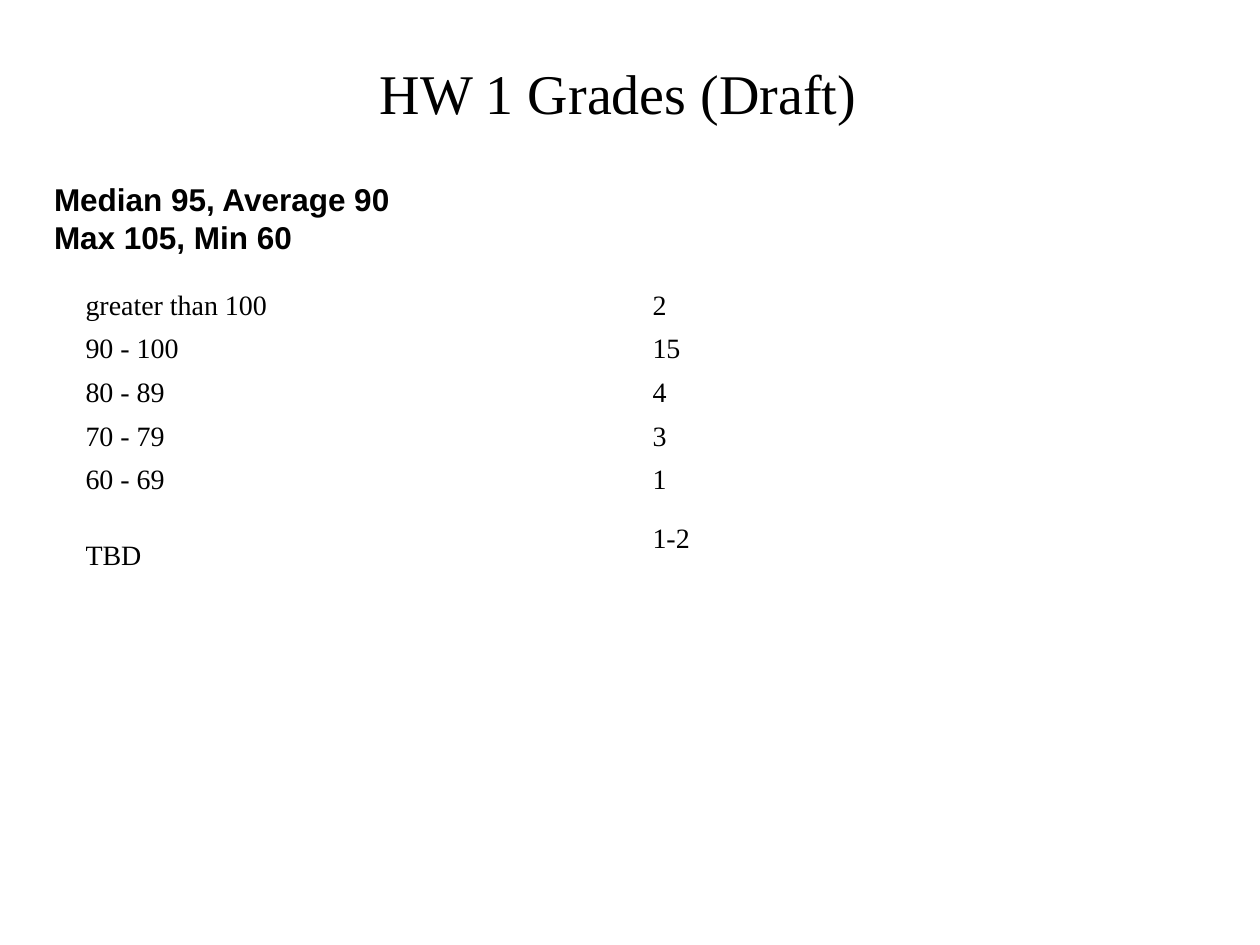
import pptx
import pptx.util
import pptx.dml.color
import pptx.enum.text
from dataclasses import dataclass

Cm = pptx.util.Cm
Anchor = pptx.enum.text.MSO_ANCHOR
Align = pptx.enum.text.PP_ALIGN

# Content
TITLE = "HW 1 Grades (Draft)"
SUMMARY = ["Median 95, Average 90", "Max 105, Min 60"]
GRADES = [
    ("greater than 100", "2"),
    ("90 - 100", "15"),
    ("80 - 89", "4"),
    ("70 - 79", "3"),
    ("60 - 69", "1"),
    ("TBD", "1-2"),
]


@dataclass(frozen=True)
class Theme:
    ink: pptx.dml.color.RGBColor = pptx.dml.color.RGBColor(0, 0, 0)
    serif: str = "Times New Roman"
    sans: str = "Arial"
    title_size: int = 32
    summary_size: int = 18
    table_size: int = 16


THEME = Theme()


def write_text(text_frame, text, font_name, size, bold=False, align=Align.LEFT):
    text_frame.text = text
    for paragraph in text_frame.paragraphs:
        paragraph.alignment = align
        for run in paragraph.runs:
            run.font.name = font_name
            run.font.size = pptx.util.Pt(size)
            run.font.bold = bold
            run.font.color.rgb = THEME.ink


def add_text_box(slide, left, top, width, height, *text_format):
    text_box = slide.shapes.add_textbox(Cm(left), Cm(top), Cm(width), Cm(height))
    text_box.text_frame.word_wrap = True
    text_box.text_frame.vertical_anchor = Anchor.MIDDLE
    write_text(text_box.text_frame, *text_format)


def add_grade_table(slide):
    row_heights = [0.88] * (len(GRADES) - 1) + [1.5]
    column_width = 11.43
    table = slide.shapes.add_table(
        len(GRADES), 2, Cm(1.47), Cm(5.72), Cm(2 * column_width), Cm(sum(row_heights))
    ).table
    table.first_row = False
    table.horz_banding = False
    for column in table.columns:
        column.width = Cm(column_width)
    for row, height, texts in zip(table.rows, row_heights, GRADES):
        row.height = Cm(height)
        for cell, text in zip(row.cells, texts):
            cell.fill.background()
            cell.margin_top = cell.margin_bottom = Cm(0.1)
            cell.vertical_anchor = Anchor.MIDDLE
            write_text(cell.text_frame, text, THEME.serif, THEME.table_size)
    # The label of the open grades sits low in its taller row
    table.cell(len(GRADES) - 1, 0).vertical_anchor = Anchor.BOTTOM


def main():
    presentation = pptx.Presentation()
    presentation.slide_width = Cm(25.4)
    presentation.slide_height = Cm(19.05)
    slide = presentation.slides.add_slide(presentation.slide_layouts[6])

    # Title
    add_text_box(slide, 0.84, 0.53, 23.24, 2.64,
                 TITLE, THEME.serif, THEME.title_size, False, Align.CENTER)
    # Grade counts
    add_grade_table(slide)
    # Summary statistics
    add_text_box(slide, 0.84, 3.5, 23.6, 1.8,
                 "\n".join(SUMMARY), THEME.sans, THEME.summary_size, True)

    presentation.save("out.pptx")


if __name__ == "__main__":
    main()
